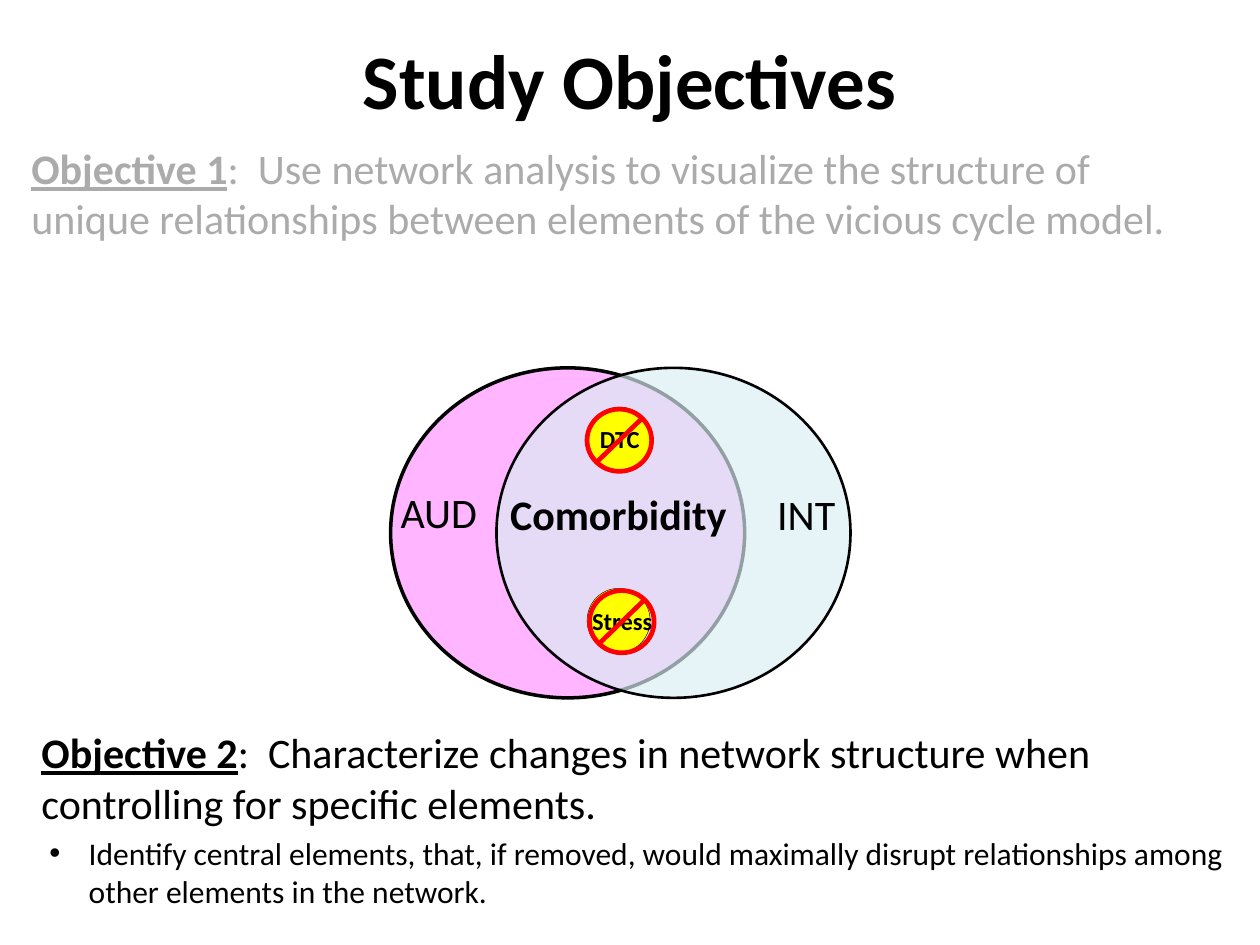
"""Build the Study Objectives slide with its comorbidity diagram."""
from dataclasses import dataclass

from lxml.etree import SubElement
from pptx import Presentation
from pptx.dml.color import RGBColor
from pptx.enum.shapes import MSO_SHAPE
from pptx.enum.text import MSO_ANCHOR, MSO_AUTO_SIZE, PP_ALIGN
from pptx.oxml.ns import qn
from pptx.util import Pt


@dataclass(frozen=True)
class Theme:
    font: str = "Calibri"
    black: str = "000000"
    white: str = "FFFFFF"
    pink: str = "FF66FF"
    blue: str = "DBEEF4"
    yellow: str = "FFFF00"
    red: str = "FF0000"
    title: int = 44
    body: int = 24
    bullet: int = 18
    small: int = 14


theme = Theme()


def add_figure(kind, box, fill, line_width=None, line=theme.black, opacity=100):
    shape = slide.shapes.add_shape(kind, *map(Pt, box))
    shape.shadow.inherit = False
    shape.fill.solid()
    shape.fill.fore_color.rgb = RGBColor.from_string(fill)
    if opacity < 100:
        color = shape.fill._xPr.find(".//" + qn("a:srgbClr"))
        SubElement(color, qn("a:alpha"), val=str(opacity * 1000))
    if line_width:
        shape.line.color.rgb = RGBColor.from_string(line)
        shape.line.width = Pt(line_width)
    else:
        shape.line.fill.background()
    return shape


def add_text(box, text, size, bold=False, wrap=False):
    shape = slide.shapes.add_textbox(*map(Pt, box))
    frame = shape.text_frame
    frame.word_wrap = wrap
    frame.auto_size = MSO_AUTO_SIZE.NONE if wrap else MSO_AUTO_SIZE.SHAPE_TO_FIT_TEXT
    frame.text = text
    font = frame.paragraphs[0].runs[0].font
    font.name, font.size, font.bold = theme.font, Pt(size), bold
    font.color.rgb = RGBColor.from_string(theme.black)
    return frame


presentation = Presentation()
presentation.slide_width, presentation.slide_height = Pt(720), Pt(540)
slide = presentation.slides.add_slide(presentation.slide_layouts[6])

add_figure(MSO_SHAPE.OVAL, (223.2, 210.2, 202.3, 188.6), theme.pink, 2, opacity=48)
add_text((221.8, 274.3, 59.8, 36), "AUD", theme.body)

title = add_text((18, 0, 684, 90), "Study Objectives", theme.title, True, True)
title.vertical_anchor = MSO_ANCHOR.MIDDLE
title.paragraphs[0].alignment = PP_ALIGN.CENTER

objectives = [
    ((10.8, 77.8, 679, 95.8), "Objective 1",
     ":  Use network analysis to visualize the structure of unique relationships "
     "between elements of the vicious cycle model."),
    ((16.6, 411.8, 691.2, 133.9), "Objective 2",
     ":  Characterize changes in network structure when controlling for specific elements."),
]
for box, label, description in objectives:
    objective = add_text(box, label, theme.body, True, True)
    paragraph = objective.paragraphs[0]
    paragraph.space_before = Pt(0.2 * theme.body)
    paragraph.runs[0].font.underline = True
    run = paragraph.add_run()
    run.text = description
    run.font.name, run.font.size = theme.font, Pt(theme.body)
    run.font.color.rgb = RGBColor.from_string(theme.black)

paragraph = objective.add_paragraph()
paragraph.text = (
    "Identify central elements, that, if removed, would maximally disrupt "
    "relationships among other elements in the network."
)
paragraph.space_before = Pt(0.2 * theme.bullet)
paragraph.font.name, paragraph.font.size = theme.font, Pt(theme.bullet)
font = paragraph.runs[0].font
font.name, font.size = theme.font, Pt(theme.bullet)
font.color.rgb = RGBColor.from_string(theme.black)
properties = paragraph._p.get_or_add_pPr()
properties.set("marL", str(Pt(27)))
properties.set("indent", str(Pt(-22.5)))
bullet_font = SubElement(properties, qn("a:buFont"), typeface="Arial")
bullet = SubElement(properties, qn("a:buChar"), char="•")
default_run = properties.find(qn("a:defRPr"))
default_run.addprevious(bullet_font)
default_run.addprevious(bullet)

add_figure(MSO_SHAPE.RECTANGLE, (0, 72, 720, 95.8), theme.white, 1.5, theme.white, 67)

add_figure(MSO_SHAPE.OVAL, (283.7, 210.2, 202.3, 188.6), theme.blue, 1.5, opacity=67)
add_text((437, 275.8, 49, 36), "INT", theme.body)

trauma = add_figure(MSO_SHAPE.OVAL, (336.2, 232.6, 36, 36.7), theme.yellow, 0.25)
frame = trauma.text_frame
frame.margin_left = frame.margin_right = frame.margin_top = frame.margin_bottom = 0
frame.vertical_anchor = MSO_ANCHOR.MIDDLE
frame.word_wrap = False
frame.text = "DTC"
frame.paragraphs[0].alignment = PP_ALIGN.CENTER
font = frame.paragraphs[0].runs[0].font
font.name, font.size, font.bold = theme.font, Pt(theme.small), True
font.color.rgb = RGBColor.from_string(theme.black)

add_figure(MSO_SHAPE.OVAL, (335.5, 336.2, 36, 36.7), theme.yellow, 0.25)
add_text((331.2, 342.7, 49.7, 24.5), "Stress", theme.small, True)

for left, top in ((336.2, 335.5), (334.8, 231.8)):
    ban = add_figure(MSO_SHAPE.NO_SYMBOL, (left, top, 38.2, 39.6), theme.red)
    ban.adjustments[0] = 0.07
    ban.rotation = 90

add_text((284.4, 275.8, 141.8, 36), "Comorbidity", theme.body, True)

presentation.save("out.pptx")
